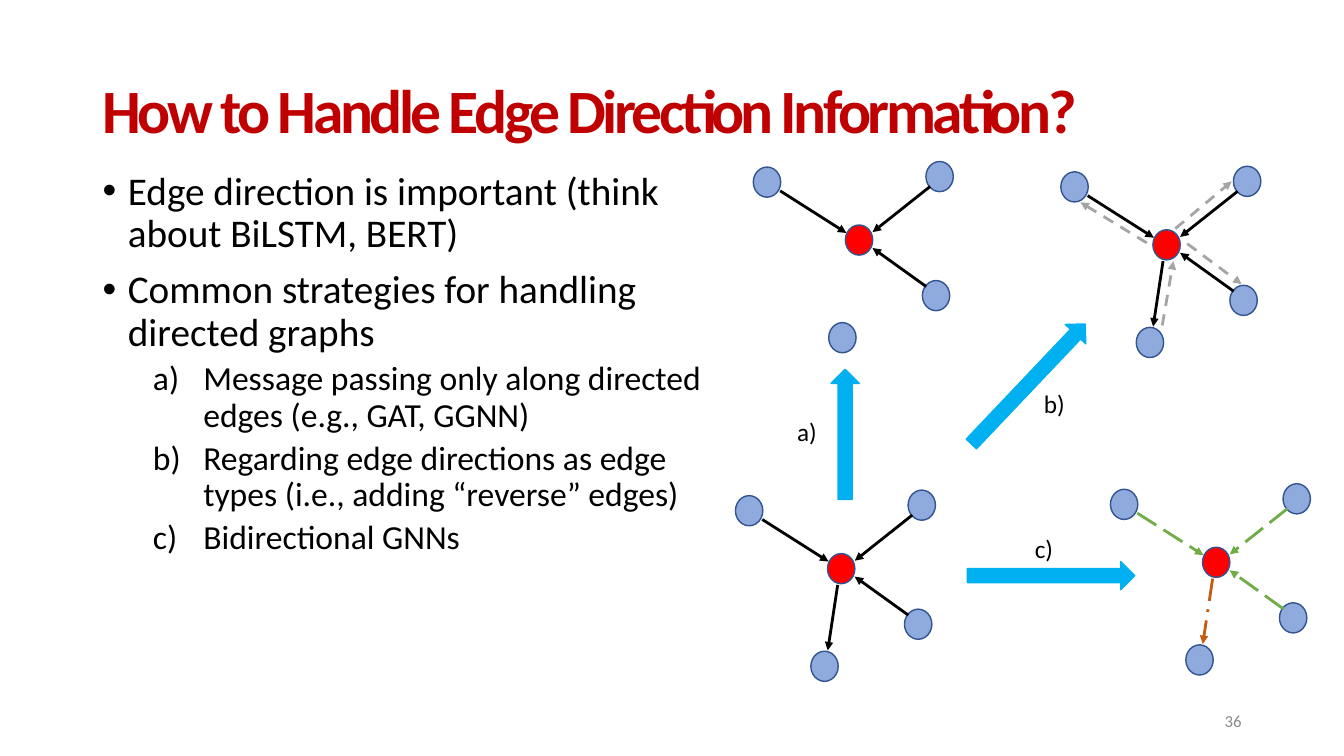
from lxml import etree
from pptx import Presentation
from pptx.dml.color import RGBColor
from pptx.enum.dml import MSO_LINE
from pptx.enum.shapes import MSO_CONNECTOR, MSO_SHAPE
from pptx.enum.text import MSO_ANCHOR, MSO_AUTO_SIZE, PP_ALIGN
from pptx.oxml.ns import qn
from pptx.util import Cm, Pt

OVAL, RIGHT_ARROW = MSO_SHAPE.OVAL, MSO_SHAPE.RIGHT_ARROW
STRAIGHT = MSO_CONNECTOR.STRAIGHT
DASH, LONG_DASH, LONG_DASH_DOT = MSO_LINE.DASH, MSO_LINE.LONG_DASH, MSO_LINE.LONG_DASH_DOT
LEFT, RIGHT = PP_ALIGN.LEFT, PP_ALIGN.RIGHT
TOP, MIDDLE = MSO_ANCHOR.TOP, MSO_ANCHOR.MIDDLE
NO_AUTOFIT = MSO_AUTO_SIZE.NONE

BLACK, GRAY, GREEN, ORANGE = "000000", "A5A5A5", "70AD47", "C55A11"
NODE_WIDTH, NODE_HEIGHT = 0.69, 0.76

# Centimetres from the centre of the hub
NODES = {"NE": (2.03, -1.6), "SE": (1.94, 1.4), "NW": (-2.32, -1.46), "S": (-0.42, 2.46)}
EDGES = {
    "NE": ((1.79, -1.35), (0.34, -0.2)),
    "NW": ((-1.99, -1.24), (-0.32, -0.18)),
    "SE": ((1.69, 1.17), (0.34, 0.2)),
    "S": ((-0.09, 0.41), (-0.34, 2.06)),
}
REVERSE_EDGES = {
    "NW": ((-0.5, -0.05), (-2.17, -1.07)),
    "S": ((-0.11, 2.03), (0.17, 0.41)),
    "NE": ((0.22, -0.41), (1.64, -1.6)),
    "SE": ((0.52, -0.03), (1.89, 0.99)),
}


def color(hex_string):
    return RGBColor.from_string(hex_string)


class SlideBuilder:
    font = "Calibri"
    hub_fill, node_fill, node_line = "FF0000", "8FAADC", "325491"
    arrow_fill, title_color = "00B0F0", "C00000"

    def __init__(self, slide):
        self.slide = slide

    def format_runs(self, paragraph, size, hex_color, bold=False):
        for run in paragraph.runs:
            run.font.name = self.font
            run.font.size = Pt(size)
            run.font.bold = bold
            run.font.color.rgb = color(hex_color)

    def place(self, shape, left, top, width, height, anchor):
        shape.left, shape.top = Cm(left), Cm(top)
        shape.width, shape.height = Cm(width), Cm(height)
        frame = shape.text_frame
        frame.auto_size = NO_AUTOFIT
        frame.vertical_anchor = anchor
        return frame

    def title(self, text):
        frame = self.place(self.slide.shapes.title, 2.33, 1.01, 29.21, 3.68, MIDDLE)
        frame.text = text
        paragraph = frame.paragraphs[0]
        paragraph.alignment = LEFT
        paragraph.line_spacing = 0.9
        self.format_runs(paragraph, 44, self.title_color, bold=True)
        for run in paragraph.runs:
            run.font._element.set("spc", "-250")

    def body(self, items):
        """Fill the body placeholder with (level, text) items."""
        frame = self.place(self.slide.placeholders[1], 2.33, 4.19, 16.41, 12.98, TOP)
        frame.text = "\n".join(text for _, text in items)
        for index, (paragraph, (level, _)) in enumerate(zip(frame.paragraphs, items)):
            paragraph.level = level
            paragraph.alignment = LEFT
            self.add_bullet(paragraph, numbered=level == 1)
            paragraph.line_spacing = 0.9
            paragraph.space_before = Pt(0 if index == 0 else 5 if level else 10)
            paragraph.space_after = Pt(0)
            self.format_runs(paragraph, 24 if level else 28, BLACK)

    def add_bullet(self, paragraph, numbered):
        properties = paragraph._p.get_or_add_pPr()
        margin, hanging = (2.54, 1.27) if numbered else (0.64, 0.64)
        properties.set("marL", str(Cm(margin)))
        properties.set("indent", str(-Cm(hanging)))
        if numbered:
            etree.SubElement(properties, qn("a:buFont"), typeface="+mj-lt")
            etree.SubElement(properties, qn("a:buAutoNum"), type="alphaLcParenR")
        else:
            etree.SubElement(properties, qn("a:buFont"), typeface="Arial")
            etree.SubElement(properties, qn("a:buChar"), char="•")

    def text(self, text, left, top, width=1.04, size=18, hex_color=BLACK,
             alignment=LEFT, anchor=TOP):
        box = self.slide.shapes.add_textbox(0, 0, 0, 0)
        frame = self.place(box, left, top, width, 1.02, anchor)
        frame.word_wrap = True
        frame.text = text
        frame.paragraphs[0].alignment = alignment
        self.format_runs(frame.paragraphs[0], size, hex_color)

    def shape(self, parent, kind, left, top, width, height, fill, line):
        shape = parent.add_shape(kind, Cm(left), Cm(top), Cm(width), Cm(height))
        shape.shadow.inherit = False
        shape.fill.solid()
        shape.fill.fore_color.rgb = color(fill)
        shape.line.color.rgb = color(line)
        shape.line.width = Pt(1)
        return shape

    def node(self, parent, center_x, center_y, fill):
        self.shape(parent, OVAL, center_x - NODE_WIDTH / 2, center_y - NODE_HEIGHT / 2,
                   NODE_WIDTH, NODE_HEIGHT, fill, self.node_line)

    def edge(self, parent, hub, ends, hex_color, dash):
        points = [Cm(origin + offset) for end in ends for origin, offset in zip(hub, end)]
        connector = parent.add_connector(STRAIGHT, *points)
        connector.line.color.rgb = color(hex_color)
        connector.line.width = Pt(2)
        if dash:
            connector.line.dash_style = dash
        etree.SubElement(connector.line._get_or_add_ln(), qn("a:tailEnd"), type="triangle")
        etree.SubElement(connector._element.spPr, qn("a:effectLst"))

    def graph(self, hub, edge_sets):
        """Draw a hub with four nodes; each edge set is (ends, colour, dash)."""
        parent = self.slide.shapes.add_group_shape().shapes
        self.node(parent, *hub, self.hub_fill)
        for x, y in NODES.values():
            self.node(parent, hub[0] + x, hub[1] + y, self.node_fill)
        for edges, hex_color, dash in edge_sets:
            for ends in edges.values():
                self.edge(parent, hub, ends, hex_color, dash)

    def block_arrow(self, left, top, length, rotation):
        arrow = self.shape(self.slide.shapes, RIGHT_ARROW, left, top, length, 0.71,
                           self.arrow_fill, self.arrow_fill)
        arrow.rotation = rotation


def main():
    presentation = Presentation()
    presentation.slide_width, presentation.slide_height = Cm(33.87), Cm(19.05)
    builder = SlideBuilder(presentation.slides.add_slide(presentation.slide_layouts[1]))

    builder.title("How to Handle Edge Direction Information?")
    builder.body([
        (0, "Edge direction is important (think about BiLSTM, BERT)"),
        (0, "Common strategies for handling directed graphs"),
        (1, "Message passing only along directed edges (e.g., GAT, GGNN)"),
        (1, "Regarding edge directions as edge types (i.e., adding “reverse” edges)"),
        (1, "Bidirectional GNNs"),
    ])
    builder.text("36", 23.92, 17.65, 7.62, 12, "8C8C8C", RIGHT, MIDDLE)

    outgoing = {"S": EDGES["S"]}
    incoming = {name: ends for name, ends in EDGES.items() if name not in outgoing}
    builder.graph((21.2, 14.33), [(EDGES, BLACK, None)])
    builder.graph((21.65, 6.05), [(incoming, BLACK, None)])
    builder.graph((29.4, 6.17), [(EDGES, BLACK, None), (REVERSE_EDGES, GRAY, DASH)])
    builder.graph((30.65, 14.17), [(incoming, GREEN, LONG_DASH),
                                   (outgoing, ORANGE, LONG_DASH_DOT)])

    builder.block_arrow(19.66, 10.59, 3.28, 270)
    builder.block_arrow(23.83, 9.32, 4.17, 313.5)
    builder.block_arrow(24.38, 14.15, 4.22, 0)
    for label, left, top in (("a)", 19.84, 10.36), ("b)", 26.06, 9.65), ("c)", 25.83, 13.31)):
        builder.text(label, left, top)

    presentation.save("out.pptx")


if __name__ == "__main__":
    main()
